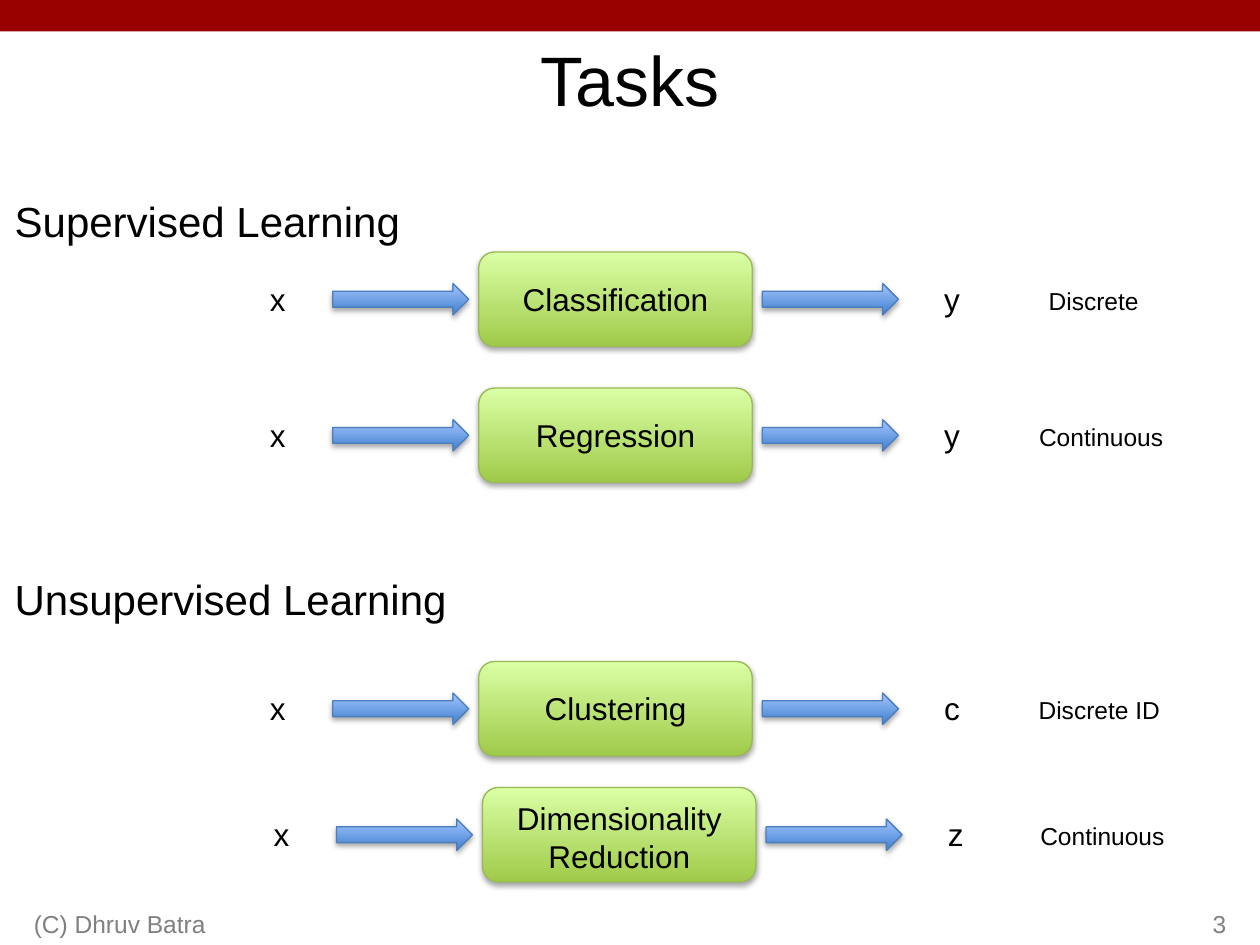
"""Build the Tasks slide: supervised and unsupervised learning as input-model-output rows."""
from dataclasses import dataclass

from lxml import etree
from pptx import Presentation
from pptx.dml.color import RGBColor
from pptx.enum.shapes import MSO_SHAPE
from pptx.enum.text import MSO_ANCHOR, MSO_AUTO_SIZE, PP_ALIGN
from pptx.oxml.ns import qn
from pptx.util import Pt

RECTANGLE = MSO_SHAPE.RECTANGLE
ROUNDED = MSO_SHAPE.ROUNDED_RECTANGLE
ARROW = MSO_SHAPE.RIGHT_ARROW
LEFT, CENTER, RIGHT = PP_ALIGN.LEFT, PP_ALIGN.CENTER, PP_ALIGN.RIGHT
TOP, MIDDLE, BOTTOM = MSO_ANCHOR.TOP, MSO_ANCHOR.MIDDLE, MSO_ANCHOR.BOTTOM
FIT, FIXED = MSO_AUTO_SIZE.SHAPE_TO_FIT_TEXT, MSO_AUTO_SIZE.NONE

PX = 9144
FONT = "Arial"
COLORS = {
    "band": "990000",
    "text": "000000",
    "footer": "808080",
    "shadow": "000000",
    "model_dark": "A0CA4A",
    "model_light": "DAFFA5",
    "model_line": "98B955",
    "arrow_dark": "3F80CE",
    "arrow_light": "A4C4FF",
    "arrow_line": "4B7EBC",
}


@dataclass(frozen=True)
class Area:
    left: int
    top: int
    width: int
    height: int

    def emu(self) -> tuple[int, int, int, int]:
        return self.left * PX, self.top * PX, self.width * PX, self.height * PX


@dataclass(frozen=True)
class Task:
    top: int
    model: str
    output: str
    note: str
    note_left: int
    note_width: int
    shift: int = 0
    label_top: int = 17
    label_height: int = 40


@dataclass(frozen=True)
class Heading:
    text: str
    top: int
    width: int


TASKS = (
    Task(200, "Classification", "y", "Discrete", 822, 92),
    Task(308, "Regression", "y", "Continuous", 814, 120),
    Task(525, "Clustering", "c", "Discrete ID", 814, 117),
    Task(625, "Dimensionality\nReduction", "z", "Continuous", 815, 120,
         shift=3, label_top=4, label_height=71),
)
HEADINGS = (
    Heading("Supervised Learning", 150, 329),
    Heading("Unsupervised Learning", 450, 366),
)


def color(name: str) -> RGBColor:
    return RGBColor.from_string(COLORS[name])


def add_text(slide, area: Area, text: str, *, size: int = 18, tint: str = "text",
             align=CENTER, anchor=TOP, wrap: bool = False, fit=FIT) -> None:
    box = slide.shapes.add_textbox(*area.emu())
    frame = box.text_frame
    frame.word_wrap = wrap
    frame.auto_size = fit
    frame.vertical_anchor = anchor
    para = frame.paragraphs[0]
    para.text = text
    para.alignment = align
    for span in para.runs:
        span.font.name = FONT
        span.font.size = Pt(size)
        span.font.color.rgb = color(tint)


def add_shadow(shape) -> None:
    shape.shadow.inherit = False
    effects = shape._element.spPr.find(qn("a:effectLst"))
    outer = etree.SubElement(effects, qn("a:outerShdw"), blurRad="40000", dist="23000",
                             dir="5400000", rotWithShape="0")
    tint = etree.SubElement(outer, qn("a:srgbClr"), val=COLORS["shadow"])
    etree.SubElement(tint, qn("a:alpha"), val="35000")


def add_glossy(slide, kind, area: Area, palette: str) -> None:
    shape = slide.shapes.add_shape(kind, *area.emu())
    shape.fill.gradient()
    shape.fill.gradient_angle = 90
    for stop, tone, position in zip(shape.fill.gradient_stops, ("dark", "light"), (0, 1)):
        stop.color.rgb = color(f"{palette}_{tone}")
        stop.position = position
    shape.line.color.rgb = color(f"{palette}_line")
    shape.line.width = Pt(0.75)
    add_shadow(shape)


def add_band(slide) -> None:
    band = slide.shapes.add_shape(RECTANGLE, *Area(0, 0, 1000, 25).emu())
    band.shadow.inherit = False
    band.fill.solid()
    band.fill.fore_color.rgb = color("band")
    band.line.fill.background()


def add_task(slide, task: Task) -> None:
    model_left = 380 + task.shift
    add_glossy(slide, ROUNDED, Area(model_left, task.top, 217, 75), "model")
    add_text(slide, Area(model_left, task.top + task.label_top, 217, task.label_height),
             task.model, wrap=True)
    for arrow_left in (264, 605):
        add_glossy(slide, ARROW, Area(arrow_left + task.shift, task.top + 25, 108, 25), "arrow")
    for symbol, symbol_left in (("x", 204), (task.output, 739)):
        add_text(slide, Area(symbol_left + task.shift, task.top + 17, 33, 40), symbol)
    add_text(slide, Area(task.note_left, task.top + 22, task.note_width, 34), task.note, size=14)


def main() -> None:
    deck = Presentation()
    deck.slide_width, deck.slide_height = 1000 * PX, 750 * PX
    slide = deck.slides.add_slide(deck.slide_layouts[6])
    add_band(slide)
    add_text(slide, Area(75, 25, 850, 75), "Tasks", size=40, anchor=MIDDLE, wrap=True, fit=FIXED)
    for text, area, align in (
        ("(C) Dhruv Batra", Area(17, 700, 317, 50), LEFT),
        ("3", Area(775, 700, 208, 50), RIGHT),
    ):
        add_text(slide, area, text, size=14, tint="footer", align=align, anchor=BOTTOM,
                 wrap=True, fit=FIXED)
    for task in TASKS:
        add_task(slide, task)
    for heading in HEADINGS:
        add_text(slide, Area(0, heading.top, heading.width, 50), heading.text, size=24)
    deck.save("out.pptx")


if __name__ == "__main__":
    main()
